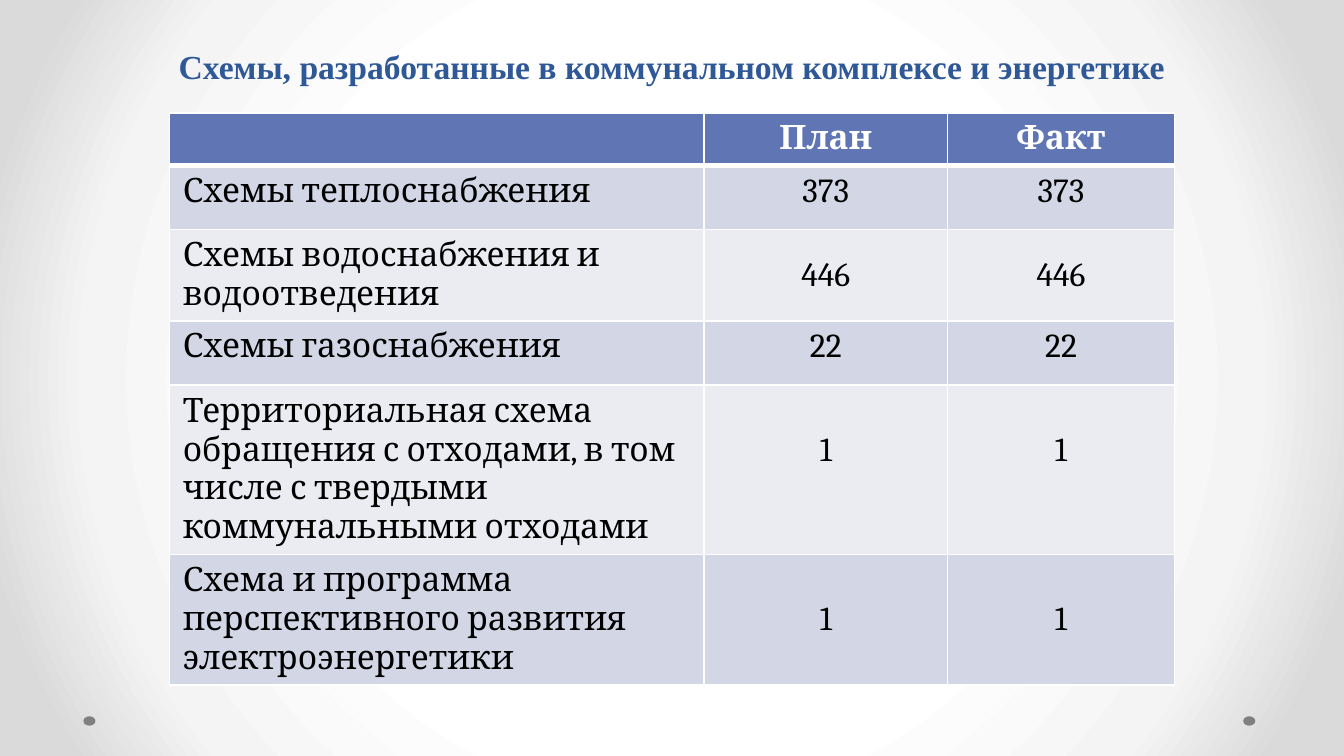
from pptx import Presentation
from pptx.dml.color import RGBColor as RGB
from pptx.enum.shapes import MSO_SHAPE as Shape
from pptx.enum.text import MSO_ANCHOR as Anchor, MSO_AUTO_SIZE as Auto, PP_ALIGN as Align
from pptx.oxml import parse_xml
from pptx.oxml.ns import nsdecls, qn
from pptx.util import Inches, Pt

HUE = {
    "title": "2F5897", "head": "6076B4", "odd": "D2D6E5", "even": "EAECF2",
    "white": "FFFFFF", "black": "000000", "dot": "808080",
}
STOPS = [(50, "FFFFFF"), (76, "F4F4F4"), (92, "DADADA")]
TITLE = "Схемы, разработанные в коммунальном комплексе и энергетике"
COLS = [3.98, 1.81, 1.69]
LINE = 0.29  # height of one line of table text

# name, plan, fact, row height, line spacing and lines left free above the figures
ROWS = [
    ("", "План", "Факт", 0.38, 1, 0),
    ("Схемы теплоснабжения", "373", "373", 0.48, 1, 0),
    ("Схемы водоснабжения и водоотведения", "446", "446", 0.67, 1.5, 0),
    ("Схемы газоснабжения", "22", "22", 0.48, 1, 0),
    ("Территориальная схема обращения с отходами, в том числе с твердыми "
     "коммунальными отходами", "1", "1", 1.26, 1, 1),
    ("Схема и программа перспективного развития электроэнергетики",
     "1", "1", 0.97, 1, 1),
]


def paint(fill, name):
    fill.solid()
    fill.fore_color.rgb = RGB.from_string(HUE[name])


def style(par, face, hue, bold):
    font = par.runs[0].font if par.runs else par.font
    font.name, font.size, font.bold = face, Pt(18), bold
    font.color.rgb = RGB.from_string(HUE[hue])


def add_back(slide):
    """Fill the background with a radial gradient."""
    slide.background.fill.gradient()
    old = slide.element.find(".//" + qn("a:gradFill"))
    stops = "".join(
        f'<a:gs pos="{pos * 1000}"><a:srgbClr val="{hue}"/></a:gs>'
        for pos, hue in STOPS)
    new = parse_xml(
        f'<a:gradFill {nsdecls("a")} rotWithShape="1"><a:gsLst>{stops}</a:gsLst>'
        '<a:path path="circle"><a:fillToRect l="50000" t="50000" r="50000" '
        'b="50000"/></a:path></a:gradFill>')
    old.getparent().replace(old, new)


def add_dots(slide, left, top, width, height):
    """Put a small dot at each end of the box."""
    size = 0.09
    for x in (left, left + width - size):
        dot = slide.shapes.add_shape(
            Shape.OVAL, Inches(x), Inches(top), Inches(size), Inches(height))
        dot.shadow.inherit = False
        paint(dot.fill, "dot")
        dot.line.fill.background()


def add_title(slide, left, top, width, height):
    title = slide.shapes.title
    title.left, title.top = Inches(left), Inches(top)
    title.width, title.height = Inches(width), Inches(height)
    frame = title.text_frame
    frame.text = TITLE
    frame.word_wrap, frame.auto_size = True, Auto.NONE
    frame.vertical_anchor = Anchor.BOTTOM
    par = frame.paragraphs[0]
    par.alignment, par.line_spacing = Align.CENTER, Pt(58)
    style(par, "Times New Roman", "title", True)


def add_edges(cell, head):
    """Draw white borders, with a thick one under the head row."""
    props = cell._tc.get_or_add_tcPr()
    for i, side in enumerate("LRTB"):
        wide = Pt(3 if head and side == "B" else 1)
        props.insert(i, parse_xml(
            f'<a:ln{side} {nsdecls("a")} w="{wide}"><a:solidFill>'
            f'<a:srgbClr val="{HUE["white"]}"/></a:solidFill></a:ln{side}>'))


def add_grid(slide, left, top, width, height):
    grid = slide.shapes.add_table(
        len(ROWS), len(COLS), Inches(left), Inches(top),
        Inches(width), Inches(height)).table
    for col, wide in zip(grid.columns, COLS):
        col.width = Inches(wide)
    for r, (*texts, tall, gap, free) in enumerate(ROWS):
        grid.rows[r].height = Inches(tall)
        head = r == 0
        for c, text in enumerate(texts):
            cell = grid.cell(r, c)
            cell.text = text
            paint(cell.fill, "head" if head else "odd" if r % 2 else "even")
            add_edges(cell, head)
            par = cell.text_frame.paragraphs[0]
            style(par, "Cambria", "white" if head else "black", head)
            if c:
                par.alignment, par.line_spacing = Align.CENTER, gap
                cell.margin_top = Inches(0.05 + free * LINE)


def main():
    deck = Presentation()
    deck.slide_width = Inches(10)
    deck.slide_height = deck.slide_width * 9 // 16
    slide = deck.slides.add_slide(deck.slide_layouts[5])
    add_back(slide)
    add_dots(slide, 0.62, 5.33, 8.72, 0.07)
    add_grid(slide, 1.26, 0.84, sum(COLS), sum(row[3] for row in ROWS))
    add_title(slide, 0, 0.01, 10, 0.68)
    deck.save("out.pptx")


if __name__ == "__main__":
    main()
